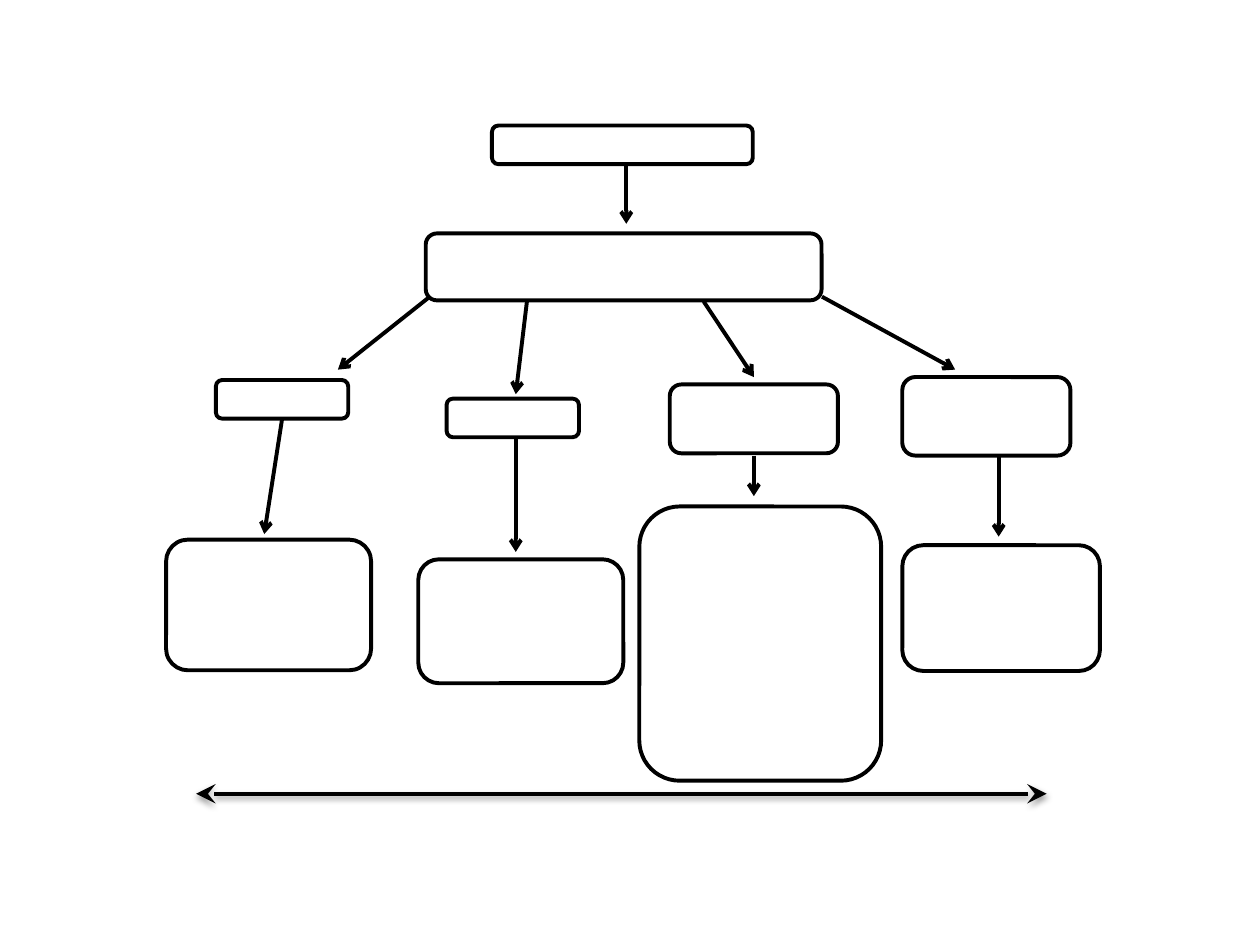
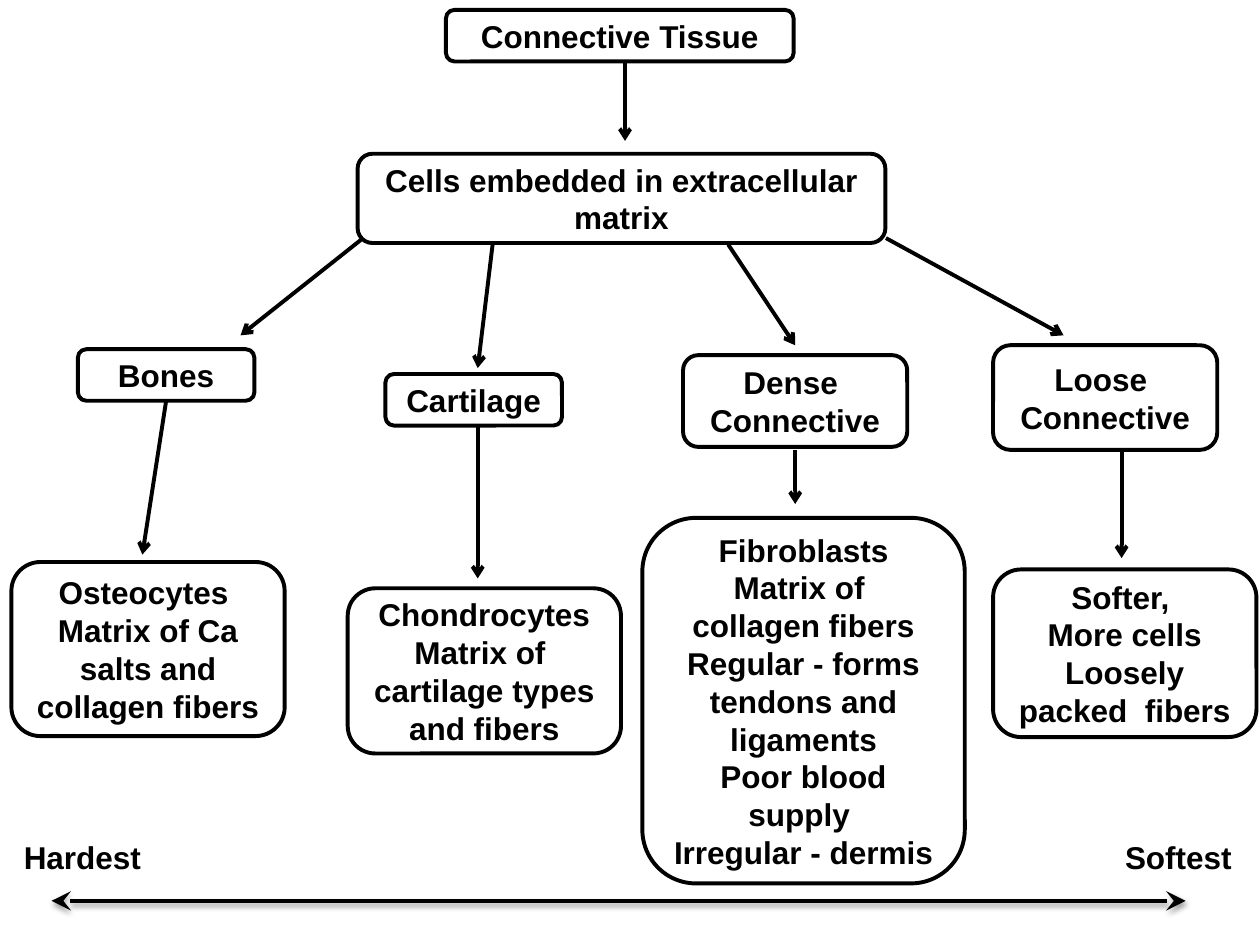
import dataclasses

import lxml.etree
import pptx
import pptx.dml.color
import pptx.enum.shapes
import pptx.enum.text
import pptx.oxml.ns
import pptx.util

Cm = pptx.util.Cm
WIDE, HIGH = 25.4, 19.05

BOXES = [
    ((8.99, 0.2, 7.01, 1.04), ["Connective Tissue"]),
    ((7.21, 3.1, 10.64, 1.8), ["Cells embedded in extracellular matrix"]),
    ((13.77, 7.16, 4.52, 1.85), ["Dense ", "Connective"]),
    ((20.02, 6.96, 4.52, 2.11), ["Loose ", "Connective"]),
    ((7.77, 7.54, 3.56, 1.04), ["Cartilage"]),
    ((0.23, 11.33, 5.51, 3.51),
     ["Osteocytes ", "Matrix of Ca salts and collagen fibers"]),
    ((1.57, 7.04, 3.56, 1.04), ["Bones"]),
    ((12.95, 10.44, 6.5, 7.37),
     ["Fibroblasts",
      "Matrix of  collagen fibers Regular - forms tendons and ligaments",
      "Poor blood supply ", "Irregular - dermis"]),
    ((7.01, 11.86, 5.51, 3.33),
     ["Chondrocytes", "Matrix of  cartilage types and fibers"]),
    ((20.02, 11.48, 5.31, 3.38),
     ["Softer, ", "More cells", "Loosely packed  fibers"]),
]
LABELS = [
    ((0.23, 16.76, 2.9, 1.02), "Hardest"),
    ((22.43, 16.76, 2.77, 1.02), "Softest"),
]
SCALE = (1.04, 18.16, 23.9, 18.16)
ARROWS = [
    (7.32, 4.8, 4.85, 6.76),
    (9.93, 4.93, 9.63, 7.42),
    (14.68, 4.93, 16.03, 6.96),
    (17.86, 4.8, 21.44, 6.76),
    (9.63, 8.59, 9.63, 11.66),
    (16.03, 9.07, 16.03, 10.16),
    (22.61, 9.07, 22.61, 11.25),
    (3.35, 8.08, 2.87, 11.18),
    (12.6, 1.24, 12.6, 2.84),
]


@dataclasses.dataclass(frozen=True)
class Theme:
    ink: str = "000000"
    paper: str = "FFFFFF"
    font: str = "Arial"
    size: float = 18
    line: float = 2.25

    def color(self, code):
        return pptx.dml.color.RGBColor.from_string(code)


def add(parent, tag, **attrs):
    return lxml.etree.SubElement(parent, pptx.oxml.ns.qn(tag), attrs)


class Board:
    def __init__(self, deck, theme, zoom):
        self.theme = theme
        self.zoom = zoom
        self.slide = deck.slides.add_slide(deck.slide_layouts[6])

    def place(self, spots):
        sides = (WIDE, HIGH, WIDE, HIGH)
        return [Cm(side / 2 + (spot - side / 2) * self.zoom)
                for spot, side in zip(spots, sides)]

    def frame(self, spot):
        x, y, w, h = spot
        left, top, right, base = self.place((x, y, x + w, y + h))
        return left, top, right - left, base - top

    def text(self, frame, lines, align):
        for i, line in enumerate(lines):
            para = frame.paragraphs[0] if i == 0 else frame.add_paragraph()
            para.alignment = align
            run = para.add_run()
            run.text = line
            run.font.name = self.theme.font
            run.font.size = pptx.util.Pt(self.theme.size)
            run.font.bold = True
            run.font.color.rgb = self.theme.color(self.theme.ink)

    def stroke(self, line):
        line.color.rgb = self.theme.color(self.theme.ink)
        line.width = pptx.util.Pt(self.theme.line)

    def box(self, spot, lines):
        kind = pptx.enum.shapes.MSO_SHAPE.ROUNDED_RECTANGLE
        shape = self.slide.shapes.add_shape(kind, *self.frame(spot))
        shape.shadow.inherit = False
        shape.fill.solid()
        shape.fill.fore_color.rgb = self.theme.color(self.theme.paper)
        self.stroke(shape.line)
        frame = shape.text_frame
        frame.word_wrap = True
        frame.vertical_anchor = pptx.enum.text.MSO_ANCHOR.MIDDLE
        self.text(frame, lines, pptx.enum.text.PP_ALIGN.CENTER)

    def label(self, spot, words):
        shape = self.slide.shapes.add_textbox(*self.frame(spot))
        shape.fill.solid()
        shape.fill.fore_color.rgb = self.theme.color(self.theme.paper)
        shape.text_frame.word_wrap = False
        self.text(shape.text_frame, [words], pptx.enum.text.PP_ALIGN.LEFT)

    def link(self, ends):
        kind = pptx.enum.shapes.MSO_CONNECTOR.STRAIGHT
        line = self.slide.shapes.add_connector(kind, *self.place(ends))
        self.stroke(line.line)
        props = line._element.spPr
        return props.find(pptx.oxml.ns.qn("a:ln")), add(props, "a:effectLst")

    def arrow(self, ends):
        line, _ = self.link(ends)
        add(line, "a:tailEnd", type="arrow")

    def scale(self, ends):
        line, effects = self.link(ends)
        for tip in ("a:headEnd", "a:tailEnd"):
            add(line, tip, type="stealth", w="lg", len="lg")
        shade = add(effects, "a:outerShdw", blurRad="40000", dist="20000",
                    dir="5400000", rotWithShape="0")
        color = add(shade, "a:srgbClr", val=self.theme.ink)
        add(color, "a:alpha", val="38000")


def draw(board, filled):
    for spot, lines in BOXES:
        board.box(spot, lines if filled else [])
    board.scale(SCALE)
    if filled:
        for spot, words in LABELS:
            board.label(spot, words)
    for ends in ARROWS:
        board.arrow(ends)


def main():
    deck = pptx.Presentation()
    deck.slide_width, deck.slide_height = Cm(WIDE), Cm(HIGH)
    theme = Theme()
    for zoom, filled in ((0.75, False), (1, True)):
        draw(Board(deck, theme, zoom), filled)
    deck.save("out.pptx")


if __name__ == "__main__":
    main()
